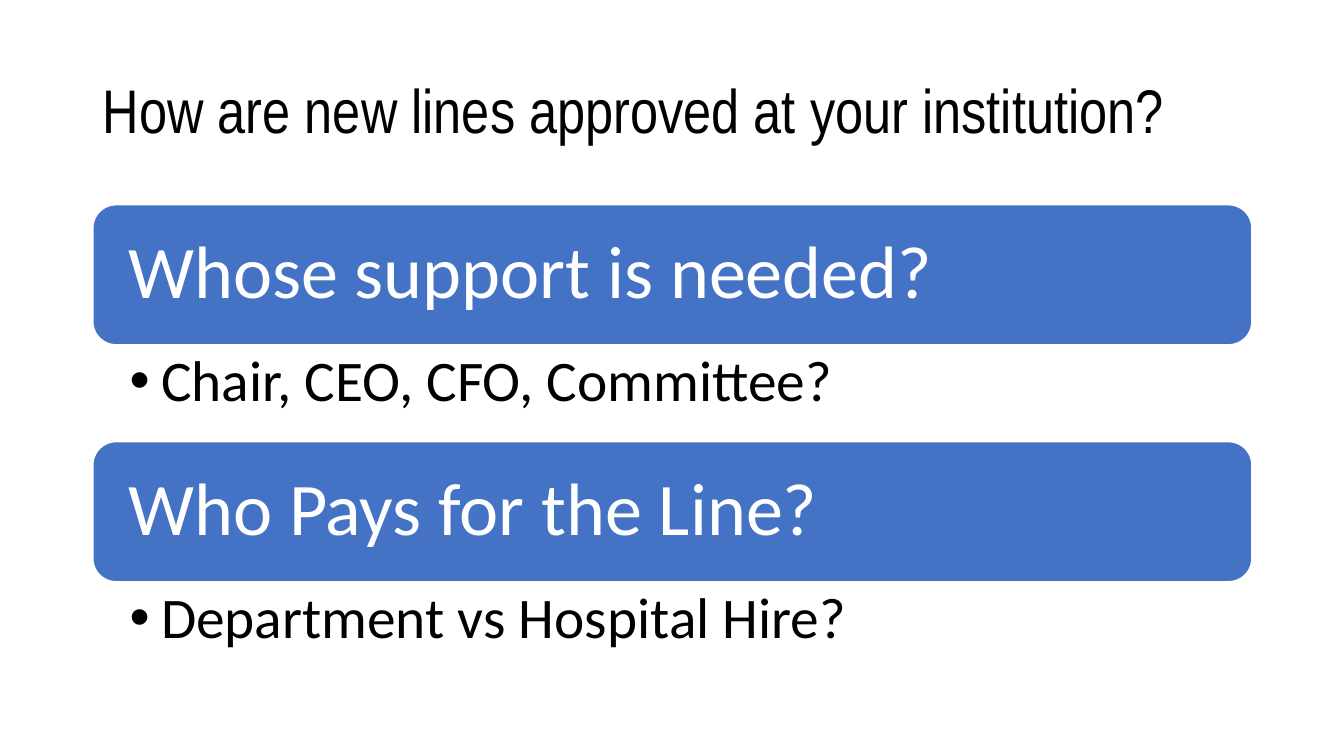
"""Build the slide on how new lines are approved."""
from lxml import etree
from pptx import Presentation
from pptx import util as u
from pptx.dml.color import RGBColor
from pptx.enum import shapes, text
from pptx.oxml.ns import qn

COLORS = {"band": "4472C4", "ink": "000000", "paper": "FFFFFF"}
LEFT, WIDTH = 2.34, 29.21
BAND_TOP, BAND_HEIGHT, ANSWER_HEIGHT = 5.16, 3.53, 2.44
TOPICS = [
    ("Whose support is needed?", "Chair, CEO, CFO, Committee?"),
    ("Who Pays for the Line?", "Department vs Hospital Hire?"),
]


class Slide:
    def __init__(self, deck):
        self.page = deck.slides.add_slide(deck.slide_layouts[5])
        self.body_font = "Calibri"
        self.title_font = "Arial Narrow"

    def color(self, name):
        return RGBColor.from_string(COLORS[name])

    def place(self, box, top, height):
        box.left, box.top = u.Cm(LEFT), u.Cm(top)
        box.width, box.height = u.Cm(WIDTH), u.Cm(height)

    def add_words(self, box, words, size, color, font, anchor, insets=None):
        frame = box.text_frame
        frame.word_wrap = True
        frame.auto_size = text.MSO_AUTO_SIZE.NONE
        frame.vertical_anchor = anchor
        if insets:
            left, top, right, bottom = map(u.Cm, insets)
            frame.margin_left, frame.margin_top = left, top
            frame.margin_right, frame.margin_bottom = right, bottom
        para = frame.paragraphs[0]
        para.alignment = text.PP_ALIGN.LEFT
        para.line_spacing = 0.9
        span = para.add_run()
        span.text = words
        span.font.size = u.Pt(size)
        span.font.name = font
        span.font.color.rgb = self.color(color)
        return para

    def title(self, words):
        box = self.page.shapes.title
        self.place(box, 1.01, 3.68)
        self.add_words(box, words, 44, "ink", self.title_font, text.MSO_ANCHOR.MIDDLE)

    def band(self, words, top):
        box = self.page.shapes.add_shape(shapes.MSO_SHAPE.ROUNDED_RECTANGLE, 0, 0, 0, 0)
        self.place(box, top, BAND_HEIGHT)
        box.shadow.inherit = False
        box.fill.solid()
        box.fill.fore_color.rgb = self.color("band")
        box.line.color.rgb = self.color("paper")
        box.line.width = u.Pt(1)
        self.add_words(box, words, 53, "paper", self.body_font,
                       text.MSO_ANCHOR.MIDDLE, (0.72, 0.72, 0.72, 0.72))

    def answer(self, words, top):
        box = self.page.shapes.add_textbox(0, 0, 0, 0)
        self.place(box, top, ANSWER_HEIGHT)
        para = self.add_words(box, words, 41, "ink", self.body_font,
                              text.MSO_ANCHOR.TOP, (0.93, 0.18, 1.04, 0.18))
        para.level = 1
        self.bullet(para)

    def bullet(self, para):
        props = para._p.get_or_add_pPr()
        indent = u.Cm(0.79)
        props.set("marL", str(indent))
        props.set("indent", str(-indent))
        etree.SubElement(props, qn("a:buFont"), typeface="Arial")
        etree.SubElement(props, qn("a:buChar"), char="•")


def main():
    deck = Presentation()
    deck.slide_width, deck.slide_height = u.Cm(33.87), u.Cm(19.05)
    slide = Slide(deck)
    slide.title("How are new lines approved at your institution?")
    for index, (question, reply) in enumerate(TOPICS):
        top = BAND_TOP + index * (BAND_HEIGHT + ANSWER_HEIGHT)
        slide.band(question, top)
        slide.answer(reply, top + BAND_HEIGHT)
    deck.save("out.pptx")


if __name__ == "__main__":
    main()
